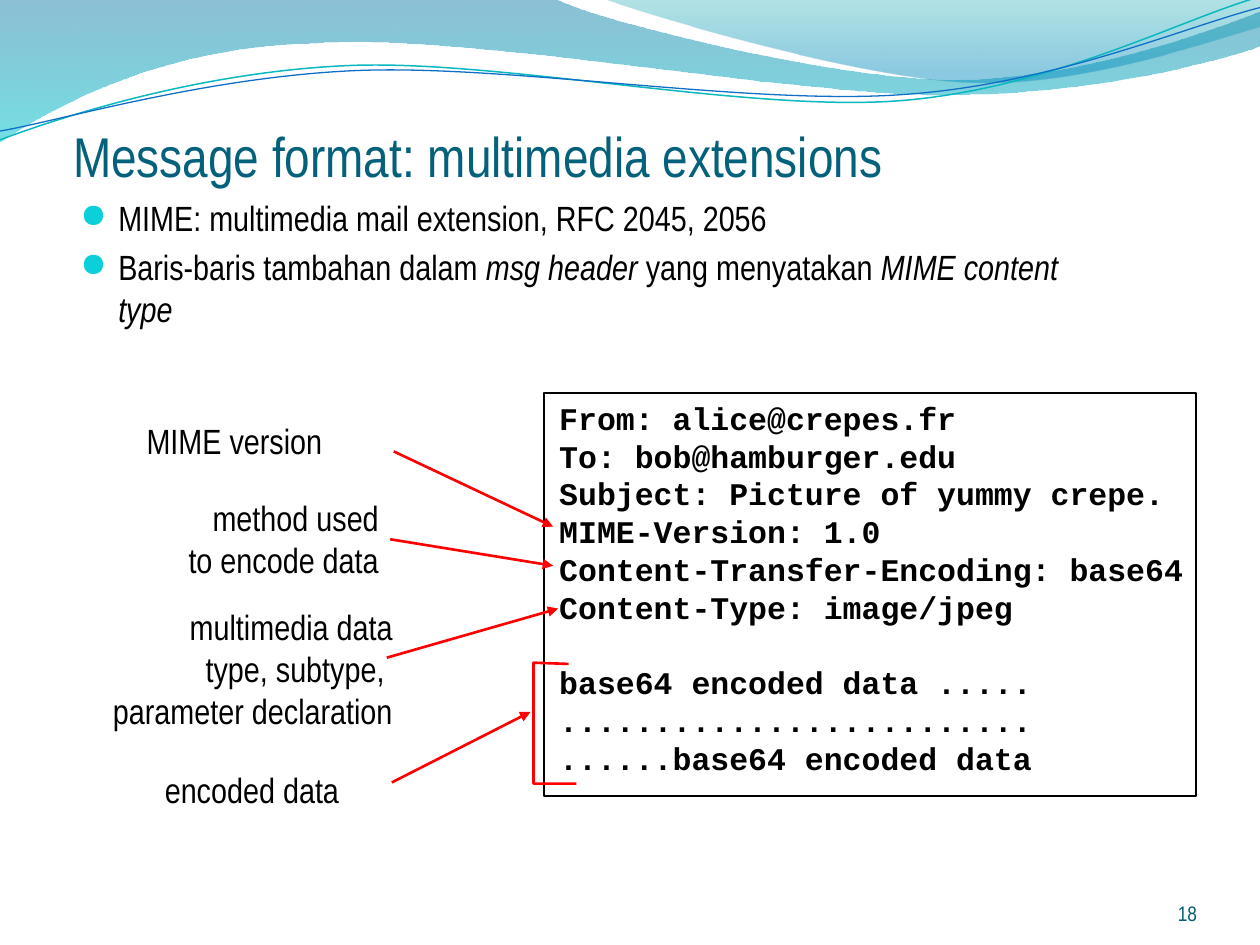
from math import cos, radians, sin

from lxml.etree import SubElement
from pptx import Presentation
from pptx.dml.color import RGBColor
from pptx.enum.shapes import MSO_CONNECTOR as CONN, MSO_SHAPE as SHAPE
from pptx.enum.text import MSO_ANCHOR as ANCHOR, MSO_AUTO_SIZE as FIT, PP_ALIGN as ALIGN
from pptx.oxml.ns import qn
from pptx.util import Inches, Pt

WIDTH, HEIGHT = Inches(10), Inches(7.5)
COLS, ROWS = 100, 75
NARROW, MONO = "Arial Narrow", "Courier New"
RED, BLACK = "FF0000", "000000"


def color(value):
    return RGBColor.from_string(value)


def at(col, row):
    return round(WIDTH * col / COLS), round(HEIGHT * row / ROWS)


def child(parent, tag, **attrs):
    return SubElement(parent, qn(tag), {k: str(v) for k, v in attrs.items()})


def write(sp, paragraphs, size=20, font=NARROW, fill=BLACK, bold=False, align=ALIGN.LEFT,
          anchor=ANCHOR.TOP, insets=(0.1, 0.05, 0.1, 0.05), wrap=True):
    tf = sp.text_frame
    tf.word_wrap, tf.vertical_anchor, tf.auto_size = wrap, anchor, FIT.NONE
    tf.margin_left, tf.margin_top, tf.margin_right, tf.margin_bottom = map(Inches, insets)
    for i, runs in enumerate(paragraphs):
        p = tf.paragraphs[0] if i == 0 else tf.add_paragraph()
        p.alignment = align
        for j, text in enumerate(runs.split("*")):
            if text:
                r = p.add_run()
                r.text = text
                r.font.name, r.font.size, r.font.bold = font, Pt(size), bold
                r.font.italic = j % 2 == 1
                r.font.color.rgb = color(fill)
    return tf


def text_box(s, box, paragraphs, **fmt):
    sp = s.shapes.add_textbox(*at(*box[:2]), *at(*box[2:]))
    return write(sp, paragraphs, **fmt)


def turn(point, center, degrees):
    dx, dy = point[0] - center[0], point[1] - center[1]
    a = radians(degrees)
    return center[0] + dx * cos(a) - dy * sin(a), center[1] + dx * sin(a) + dy * cos(a)


def bend(sp, segments):
    outline_xml = next(sp.element.iter(qn("a:moveTo"))).getparent()
    lines = iter(outline_xml.findall(qn("a:lnTo")))
    for seg in segments:
        first = next(lines)
        if len(seg) == 3:
            curve = outline_xml.makeelement(qn("a:cubicBezTo"))
            first.addprevious(curve)
            for line in (first, next(lines), next(lines)):
                curve.append(line[0])
                outline_xml.remove(line)


def outline(s, start, segments, line=None, width=1.0, stops=None, center=None, tilt=0):
    points = [start] + [p for seg in segments for p in seg]
    if center:
        points = [turn(p, center, -tilt) for p in points]
    points = [at(*p) for p in points]
    fb = s.shapes.build_freeform(*points[0])
    fb.add_line_segments(points[1:], close=bool(stops))
    sp = fb.convert_to_shape()
    bend(sp, segments)
    sp.rotation = tilt
    sp.shadow.inherit = False
    sp.fill.background()
    if line:
        sp.line.color.rgb, sp.line.width = color(line), Pt(width)
    else:
        sp.line.fill.background()
    if stops:
        sp.fill.gradient()
        grad = sp.element.spPr.find(qn("a:gradFill"))
        for old in list(grad):
            grad.remove(old)
        stop_list = child(grad, "a:gsLst")
        for pos, tint, alpha in stops:
            stop = child(stop_list, "a:gs", pos=pos * 1000)
            child(child(stop, "a:srgbClr", val=tint), "a:alpha", val=alpha * 1000)
        child(grad, "a:lin", ang=5400000, scaled=0)


def add_waves(s, box):
    x, y, w, h = box

    def place(*shares):
        return [(x + px * w / 100, y + py * h / 10)
                for px, py in zip(shares[::2], shares[1::2])]

    def wave(start, *segments, **fmt):
        outline(s, place(*start)[0], [place(*seg) for seg in segments], **fmt)

    wave((0, 0), (44, -0.1), (47.6, 1.7, 66.4, 6.3, 75.8, 6.3),
         (85.3, 6.3, 95.8, 2.6, 100, 0.9), (100.1, 3.6),
         (98.3, 4.4, 87, 7.6, 74.6, 7.5), (62.2, 7.5, 38.2, 2.8, 25.7, 3.4),
         (12.9, 3.6, 4.6, 8.3, -0.1, 11.3),
         stops=[(0, "0074A1", 45), (100, "00C6CF", 55)])
    wave((47.9, -0.1), (50.9, 1.1, 68.2, 6.2, 76.9, 6.5),
         (85.6, 6.9, 96.1, 3.2, 100, 2.1), (100, 0),
         stops=[(0, "00A1A9", 30), (80, "008BBF", 45)])
    wave((0, 11.1), (4.8, 9.3, 15.8, 5.7, 27.7, 5.2), (39.5, 4.7, 59.3, 8.9, 71.3, 8),
         (83.3, 7.1, 93.8, 1.5, 99.8, -0.2), line="0AB8BF", width=0.85,
         center=place(49.9, 5.75)[0], tilt=-2.7)
    wave((0, 10.4), (4.7, 9.6, 16.4, 6.1, 28.3, 5.6), (40.3, 5.1, 59.7, 8.4, 71.7, 7.5),
         (83.6, 6.7, 94.1, 2.1, 100, 0.6), line="0F6FC6", width=0.75,
         center=place(49.95, 5.9)[0], tilt=-2.7)


def add_title(s, box, text):
    sp = s.shapes.title
    sp.left, sp.top = at(*box[:2])
    sp.width, sp.height = at(*box[2:])
    write(sp, [text], size=32, fill="04617B", anchor=ANCHOR.BOTTOM, insets=(0, 0.05, 0, 0))


def add_bullets(s, box, items):
    for p in text_box(s, box, items).paragraphs:
        p.space_before = Pt(4)
        pPr = p._p.get_or_add_pPr()
        pPr.set("marL", str(Inches(0.3)))
        pPr.set("indent", str(-Inches(0.3)))
        child(child(pPr, "a:buClr"), "a:srgbClr", val="0BD0D9")
        child(pPr, "a:buSzPct", val=95000)
        child(pPr, "a:buFont", typeface="OpenSymbol")
        child(pPr, "a:buChar", char="●")


def add_message(s, box, header, body):
    x, y, w, h = box
    tf = text_box(s, (x + 0.25, y, w + 2.6, h + 2), header + body, size=18, font=MONO, bold=True)
    tf.paragraphs[len(header)].space_before = Pt(21.6)
    frame = s.shapes.add_shape(SHAPE.RECTANGLE, *at(x, y), *at(w, h))
    frame.shadow.inherit = False
    frame.fill.background()
    frame.line.color.rgb, frame.line.width = color(BLACK), Pt(1)


def add_arrow(s, start, end):
    cx = s.shapes.add_connector(CONN.STRAIGHT, *at(*start), *at(*end))
    cx.line.color.rgb, cx.line.width = color(RED), Pt(1.5)
    child(cx.line._get_or_add_ln(), "a:tailEnd", type="triangle")
    child(cx._element.spPr, "a:effectLst")


def add_callouts(s, callouts):
    for box, lines, align, start, end in callouts:
        text_box(s, box, lines, align=align, wrap=False)
        add_arrow(s, start, end)


def add_bracket(s, box):
    x, y, w, h = box
    outline(s, (x + w * 0.82, y + 0.1), [[(x, y)], [(x, y + h)], [(x + w, y + h)]],
            line=RED, width=1.5)


def main():
    prs = Presentation()
    prs.slide_width, prs.slide_height = WIDTH, HEIGHT
    s = prs.slides.add_slide(prs.slide_layouts[5])
    add_waves(s, (0, 0, COLS, 10))
    add_title(s, (5.8, 2.5, 91.7, 12.5), "Message format: multimedia extensions")
    add_bullets(s, (5.4, 15.1, 80.1, 50.8), [
        "MIME: multimedia mail extension, RFC 2045, 2056",
        "Baris-baris tambahan dalam *msg header* yang menyatakan *MIME content type*",
    ])
    text_box(s, (86.7, 69.5, 8.3, 4), ["18"], size=12, fill="045D75", align=ALIGN.RIGHT,
             anchor=ANCHOR.BOTTOM, insets=(0, 0, 0, 0))
    add_message(s, (43.15, 31.17, 51.8, 32), [
        "From: alice@crepes.fr",
        "To: bob@hamburger.edu",
        "Subject: Picture of yummy crepe.",
        "MIME-Version: 1.0",
        "Content-Transfer-Encoding: base64",
        "Content-Type: image/jpeg",
    ], ["base64 encoded data .....", "." * 25, "......base64 encoded data"])
    add_callouts(s, [
        ((10.65, 32.8, 20.3, 4.3), ["MIME version"], ALIGN.LEFT, (31.25, 35.83), (43.9, 41.8)),
        ((9.85, 38.9, 21.2, 7.7), ["method used", "to encode data"], ALIGN.RIGHT,
         (30.97, 42.8), (43.9, 44.9)),
        ((1.25, 47.6, 30.9, 11), ["multimedia data", "type, subtype, ", "parameter declaration"],
         ALIGN.RIGHT, (30.7, 52.2), (44.3, 48.3)),
        ((12.1, 60.5, 19.3, 4.3), ["encoded data"], ALIGN.LEFT, (31.1, 62.1), (42.1, 56.5)),
    ])
    add_bracket(s, (42.35, 52.6, 3.4, 9.6))
    prs.save("out.pptx")


if __name__ == "__main__":
    main()
